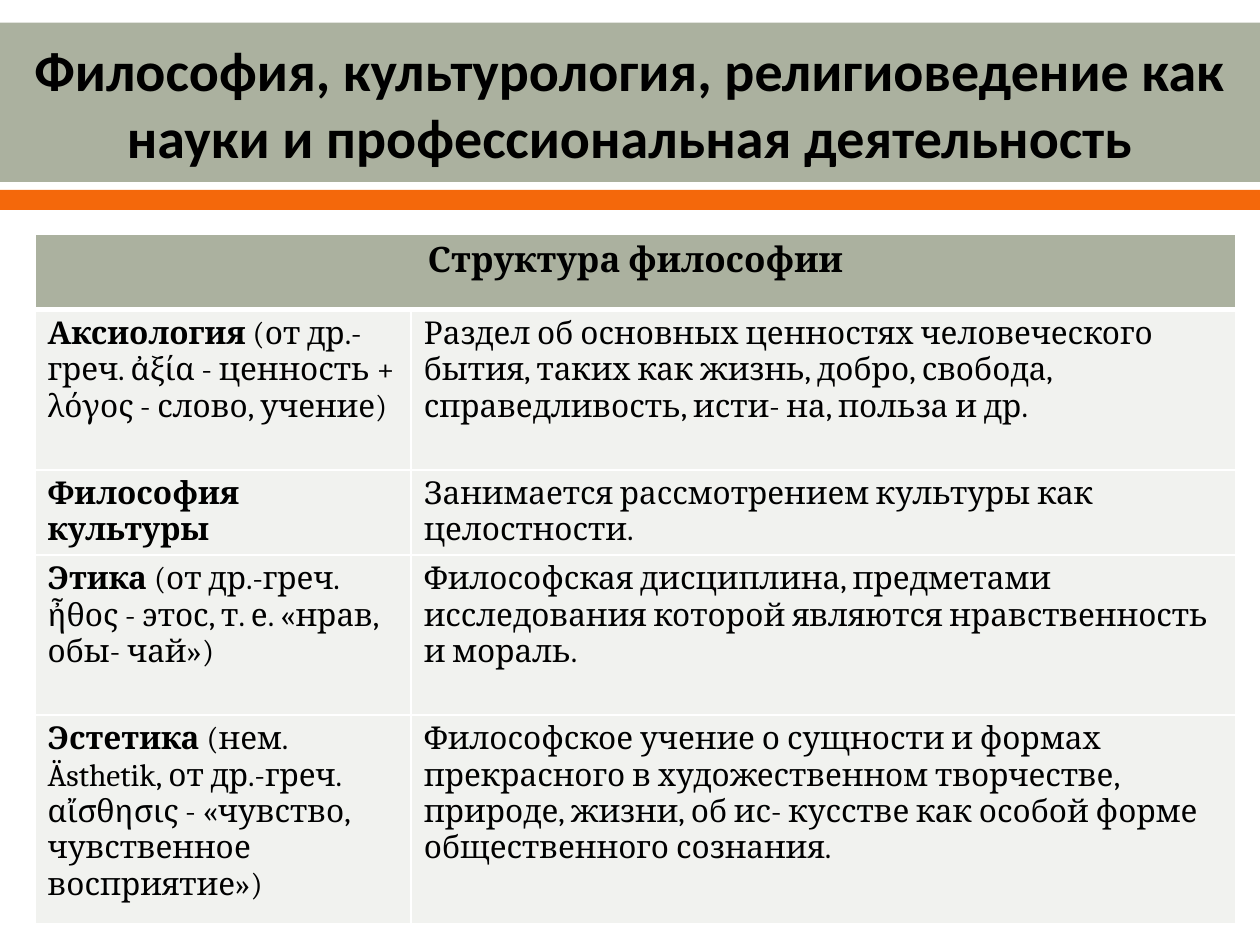
from dataclasses import dataclass

from lxml.etree import SubElement
from pptx import Presentation
from pptx.dml.color import RGBColor
from pptx.enum.shapes import MSO_SHAPE as Shape
from pptx.enum.text import MSO_ANCHOR as Anchor, MSO_AUTO_SIZE as AutoSize, PP_ALIGN as Align
from pptx.oxml import parse_xml
from pptx.oxml.ns import nsdecls, qn
from pptx.util import Pt


@dataclass(frozen=True)
class Theme:
    """Colours, fonts and type sizes of the slide."""
    sage: str = "ABB19F"
    orange: str = "F4680B"
    pale: str = "F1F2EF"
    white: str = "FFFFFF"
    black: str = "000000"
    title_font: str = "Calibri"
    table_font: str = "Cambria"
    title_size: int = 32
    header_size: int = 20
    body_size: int = 18


THEME = Theme()
TITLE = "Философия, культурология, религиоведение как науки и профессиональная деятельность"
HEADER = "Структура философии"
COLUMN_WIDTHS = (215, 471)
ROW_HEIGHTS = (43, 91.5, 40, 91.5, 119)
BRANCHES = (
    ("Аксиология", " (от др.- греч. ἀξία - ценность + λόγος - слово, учение)",
     "Раздел об основных ценностях человеческого бытия, таких как жизнь, добро, свобода, "
     "справедливость, исти- на, польза и др."),
    ("Философия культуры", "",
     "Занимается рассмотрением культуры как целостности."),
    ("Этика", " (от др.-греч. ἦθος - этос, т. е. «нрав, обы- чай»)",
     "Философская дисциплина, предметами исследования которой являются нравственность и мораль."),
    ("Эстетика", " (нем. Ästhetik, от др.-греч. αἴσθησις - «чувство, чувственное восприятие»)",
     "Философское учение о сущности и формах прекрасного в художественном творчестве, природе, "
     "жизни, об ис- кусстве как особой форме общественного сознания."),
)


def add_text(paragraph, text, *, font=THEME.table_font, size=THEME.body_size, bold=False,
             color=THEME.black, align=Align.LEFT):
    """Append a formatted run to a paragraph and return it."""
    paragraph.alignment = align
    run = paragraph.add_run()
    run.text = text
    run.font.name, run.font.size, run.font.bold = font, Pt(size), bold
    run.font.color.rgb = RGBColor.from_string(color)
    return run


def add_text_shadow(run):
    """Give the letters of a run a soft shadow."""
    fill = run._r.get_or_add_rPr().find(qn("a:solidFill"))
    fill.addnext(parse_xml(
        f'<a:effectLst {nsdecls("a")}><a:outerShdw blurRad="38100" dist="38100" dir="2700000">'
        '<a:srgbClr val="000000"><a:alpha val="43000"/></a:srgbClr></a:outerShdw></a:effectLst>'))


def add_band(slide, box, color):
    """Draw a plain coloured band in the box."""
    band = slide.shapes.add_shape(Shape.RECTANGLE, *map(Pt, box))
    band.shadow.inherit = False
    band.fill.solid()
    band.fill.fore_color.rgb = RGBColor.from_string(color)
    band.line.fill.background()


def add_title(slide, box):
    """Place the title over its sage band, with the orange stripe below."""
    left, top, width, height = box
    add_band(slide, box, THEME.sage)
    add_band(slide, (left, top + height + 4.5, width, 11.5), THEME.orange)
    title = slide.shapes.title
    title.element.getparent().append(title.element)
    title.left, title.top, title.width, title.height = map(Pt, (left, top + 1.5, width, height - 3))
    frame = title.text_frame
    frame.auto_size, frame.word_wrap = AutoSize.NONE, True
    frame.vertical_anchor = Anchor.MIDDLE
    run = add_text(frame.paragraphs[0], TITLE, font=THEME.title_font, size=THEME.title_size,
                   bold=True, align=Align.CENTER)
    add_text_shadow(run)


def format_cell(cell, color, top=1, bottom=1):
    """Set the fill, margins and white borders of a cell."""
    cell.margin_left = cell.margin_right = Pt(7.2)
    cell.margin_top = cell.margin_bottom = Pt(3.6)
    properties = cell._tc.get_or_add_tcPr()
    for side, width in (("L", 1), ("R", 1), ("T", top), ("B", bottom)):
        line = SubElement(properties, qn(f"a:ln{side}"), w=str(Pt(width)))
        fill = SubElement(line, qn("a:solidFill"))
        SubElement(fill, qn("a:srgbClr"), val=THEME.white)
    cell.fill.solid()
    cell.fill.fore_color.rgb = RGBColor.from_string(color)


def add_branches_table(slide, left, top):
    """Place the table of branches with its top left corner at the given point."""
    table = slide.shapes.add_table(
        len(ROW_HEIGHTS), len(COLUMN_WIDTHS), Pt(left), Pt(top),
        Pt(sum(COLUMN_WIDTHS)), Pt(sum(ROW_HEIGHTS))).table
    for column, width in zip(table.columns, COLUMN_WIDTHS):
        column.width = Pt(width)
    for index, (row, height) in enumerate(zip(table.rows, ROW_HEIGHTS)):
        row.height = Pt(height)
        for cell in row.cells:
            format_cell(cell, THEME.pale if index else THEME.sage,
                        top=3 if index == 1 else 1, bottom=1 if index else 3)
    header = table.cell(0, 0)
    header.merge(table.cell(0, 1))
    add_text(header.text_frame.paragraphs[0], HEADER, size=THEME.header_size, bold=True,
             align=Align.CENTER)
    for index, (name, origin, meaning) in enumerate(BRANCHES, start=1):
        term, definition = (table.cell(index, column).text_frame.paragraphs[0]
                            for column in range(2))
        add_text(term, name, bold=True)
        if origin:
            add_text(term, origin)
        add_text(definition, meaning)


def main():
    """Build and save the presentation."""
    presentation = Presentation()
    presentation.slide_width, presentation.slide_height = Pt(720), Pt(540)
    slide = presentation.slides.add_slide(presentation.slide_layouts[5])
    add_title(slide, (0, 13, 720, 91))
    add_branches_table(slide, 20, 134)
    presentation.save("out.pptx")


if __name__ == "__main__":
    main()
